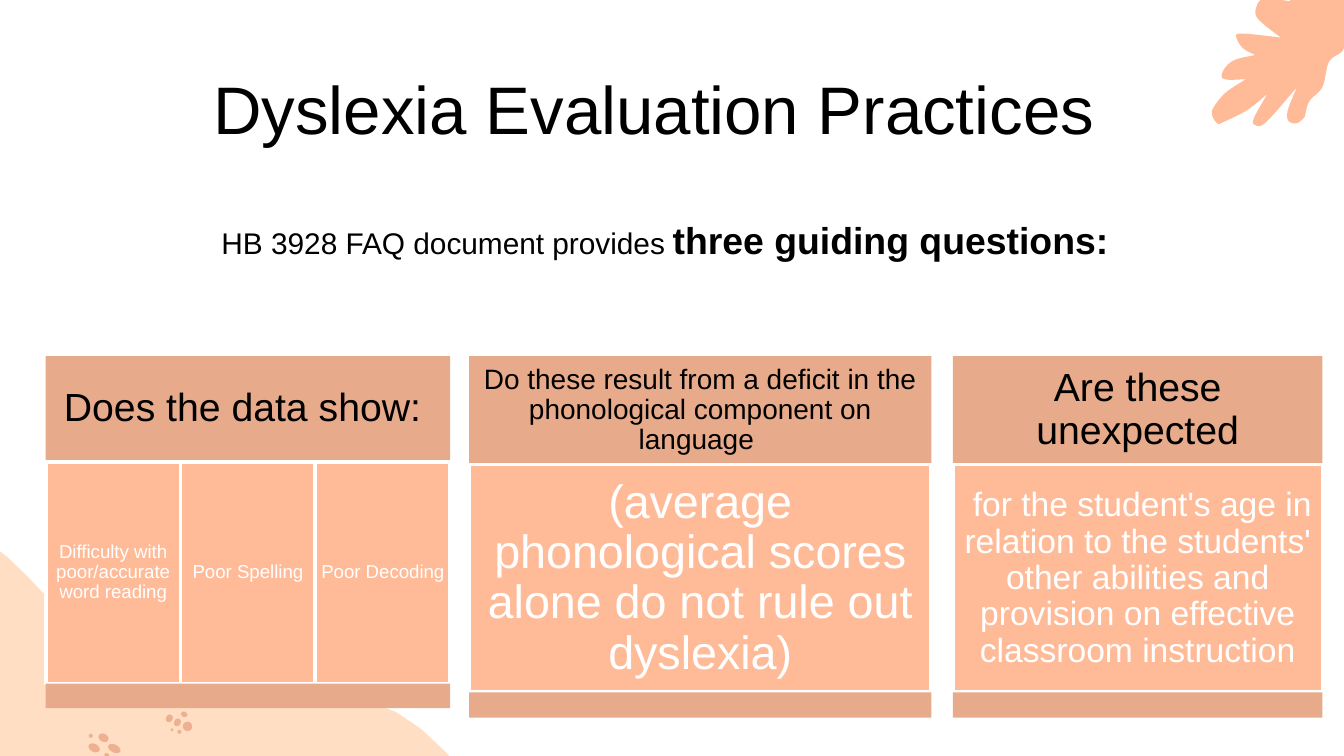
import pptx
import pptx.util
import pptx.dml.color
import pptx.enum.shapes
import pptx.enum.text

Inches, Pt = pptx.util.Inches, pptx.util.Pt
Shape = pptx.enum.shapes.MSO_SHAPE
Align = pptx.enum.text.PP_ALIGN
Anchor = pptx.enum.text.MSO_ANCHOR

THEME = {
    "font": "Arial",
    "ink": "000000", "white": "FFFFFF", "head": "E7AA8A", "body": "FFBB98",
    "blob": "FFDEC4", "speck": "EDB091",
    "title": 36, "lead": 16, "gap": 14, "strong": 20,
}

# Content
TITLE = "Dyslexia Evaluation Practices"
LEAD = [("HB 3928 FAQ document provides", "lead", False),
        (" ", "gap", False),
        ("three guiding questions:", "strong", True)]
# left, width, height; head text, size, inset; cell texts, size, inset
CARDS = [
    (0.34, 3.01, 2.62, ("Does the data show: ", 21, 0.09),
     (["Difficulty with poor/accurate word reading", "Poor Spelling",
       "Poor Decoding"], 10, 0.04)),
    (3.49, 3.44, 2.69,
     ("Do these result from a deficit in the phonological component on language ",
      15, 0.06),
     (["(average phonological scores alone do not rule out dyslexia)"], 25, 0.1)),
    (7.09, 2.75, 2.69, ("Are these unexpected", 21, 0.09),
     ([" for the student's age in relation to the students' other abilities "
       "and provision on effective classroom instruction"], 18, 0.07)),
]
TOP = 2.65
HEAD, BODY, FOOT = 0.3, 0.63, 0.07

# Outlines: each strand is a smooth curve, strands meet in sharp corners
LEAF = [
    [(9.6, 0.01), (9.41, -0.01), (9.35, 0.05), (9.36, 0.14), (9.53, 0.28)],
    [(9.53, 0.28), (9.24, 0.25), (9.2, 0.28), (9.25, 0.36), (9.34, 0.41)],
    [(9.34, 0.41), (9.18, 0.45), (9.1, 0.53), (9.11, 0.59), (9.27, 0.59)],
    [(9.27, 0.59), (9.12, 0.69), (9.03, 0.8), (9.02, 0.86), (9.06, 0.92),
     (9.1, 0.91), (9.28, 0.82), (9.43, 0.7)],
    [(9.43, 0.7), (9.33, 0.88), (9.34, 0.93), (9.42, 0.91), (9.65, 0.65)],
    [(9.65, 0.65), (9.58, 0.83), (9.6, 0.91), (9.7, 0.88), (9.91, 0.57)],
    [(9.91, 0.57), (9.87, 0.71), (9.96, 0.82), (10.08, 0.75), (10.2, 0.36)],
    [(10.2, 0.36), (10.22, 0.52), (10.3, 0.52), (10.41, 0.16), (10.43, -0.1)],
    [(10.43, -0.1), (10.2, -0.18), (10, -0.21), (9.95, -0.15), (10, -0.07)],
    [(10, -0.07), (9.87, -0.15), (9.66, -0.17), (9.6, -0.11), (9.6, 0.01)],
]
EDGE = [[
    (10.62, -0.08), (10.51, -0.15), (10.32, -0.16), (10.18, -0.03),
    (10.14, 0.11), (10.09, 0.15), (10.01, 0.28), (9.99, 0.38), (9.89, 0.46),
    (9.84, 0.65), (9.74, 0.76), (9.7, 0.91), (9.66, 0.98), (9.65, 1.06),
    (9.56, 1.29), (9.53, 1.38), (9.72, 1.28), (9.85, 1.12), (9.99, 1.04),
    (10.09, 0.93), (10.1, 0.77), (10.26, 0.62), (10.3, 0.44), (10.44, 0.34),
    (10.48, 0.26), (10.55, 0.24), (10.64, 0.07), (10.62, -0.08)]]
BLOB = [[
    (-4.1, 2.92), (-4.09, 2.77), (-3.96, 2.77), (-3.51, 3.02), (-2.88, 3.2),
    (-1.35, 3.35), (-0.09, 4.03), (1.14, 5.1), (2.95, 5.3), (4.25, 6.77),
    (5.37, 7.55), (5.88, 8.84), (5.85, 8.96), (5.62, 9.02), (4.57, 8.66),
    (2.98, 8.96), (1.53, 8.57), (0.06, 8.37), (-1.06, 8.74), (-1.44, 8.58),
    (-2.41, 8.33), (-2.73, 8.26), (-2.94, 7.86), (-3.6, 5.07), (-4.1, 2.92)]]
SPECKS = [
    (0.67, 5.52, 0.06, 0.09), (0.74, 5.45, 0.06, 0.08), (0.82, 5.52, 0.06, 0.1),
    (0.78, 5.6, 0.03, 0.04), (0.66, 5.46, 0.03, 0.03), (1.35, 5.29, 0.04, 0.05),
    (1.36, 5.37, 0.07, 0.07), (1.29, 5.35, 0.06, 0.05), (1.32, 5.43, 0.03, 0.03),
    (1.23, 5.32, 0.06, 0.05), (1.27, 5.42, 0.02, 0.02)]
TURN = 117.3


def color(name):
    return pptx.dml.color.RGBColor.from_string(THEME[name])


def paint(shape, fill, line=None):
    shape.shadow.inherit = False
    shape.fill.solid()
    shape.fill.fore_color.rgb = color(fill)
    if line:
        shape.line.color.rgb = color(line)
        shape.line.width = Pt(2)
    else:
        shape.line.fill.background()


def style(font, size, ink, bold=False):
    font.name, font.size, font.bold = THEME["font"], Pt(size), bold
    font.color.rgb = color(ink)


def curve(dots, steps=8):
    """Points of a smooth line through the dots."""
    ring = dots[0] == dots[-1]
    first, last = (dots[-2], dots[1]) if ring else (dots[0], dots[-1])
    pad = [first, *dots, last]
    for a, b, c, d in zip(pad, pad[1:], pad[2:], pad[3:]):
        for t in (i / steps for i in range(1, steps + 1)):
            yield tuple(
                Inches((2 * q + (r - p) * t
                        + (2 * p - 5 * q + 4 * r - s) * t ** 2
                        + (3 * q - p - 3 * r + s) * t ** 3) / 2)
                for p, q, r, s in zip(a, b, c, d))


def outline(shapes, strands, fill):
    pen = shapes.build_freeform(*map(Inches, strands[0][0]))
    pen.add_line_segments([dot for strand in strands for dot in curve(strand)])
    paint(pen.convert_to_shape(), fill)


def box(shapes, rect, fill, line=None, kind=Shape.RECTANGLE):
    shape = shapes.add_shape(kind, *map(Inches, rect))
    paint(shape, fill, line)
    return shape


def label(shape, text, size, inset, ink):
    frame = shape.text_frame
    frame.word_wrap = True
    frame.vertical_anchor = Anchor.MIDDLE
    frame.margin_left = frame.margin_right = Inches(inset)
    frame.margin_top = frame.margin_bottom = Inches(inset)
    para = frame.paragraphs[0]
    para.text, para.alignment, para.line_spacing = text, Align.CENTER, 0.9
    style(para.font, size, ink)


def card(shapes, left, width, height, head, cells):
    high, mid, low = (height * part for part in (HEAD, BODY, FOOT))
    label(box(shapes, (left, TOP, width, high), "head"), *head, "ink")
    texts, size, inset = cells
    wide = width / len(texts)
    for i, text in enumerate(texts):
        cell = box(shapes, (left + i * wide, TOP + high, wide, mid),
                   "body", "white")
        label(cell, text, size, inset, "white")
    box(shapes, (left, TOP + high + mid, width, low), "head")


def main():
    deck = pptx.Presentation()
    deck.slide_width = Inches(10)
    deck.slide_height = deck.slide_width * 9 // 16
    slide = deck.slides.add_slide(deck.slide_layouts[5])
    shapes = slide.shapes

    # Leaf, blob and specks
    for strands, fill in ((LEAF, "body"), (EDGE, "white"), (BLOB, "blob")):
        outline(shapes, strands, fill)
    for rect in SPECKS:
        box(shapes, rect, "speck", kind=Shape.OVAL).rotation = TURN

    # Title
    title = shapes.title
    title.left, title.top = Inches(0.76), Inches(0.45)
    title.width, title.height = Inches(8.21), Inches(0.71)
    frame = title.text_frame
    frame.auto_size = pptx.enum.text.MSO_AUTO_SIZE.NONE
    frame.vertical_anchor = Anchor.TOP
    para = frame.paragraphs[0]
    para.text, para.alignment = TITLE, Align.CENTER
    style(para.font, THEME["title"], "ink")

    # Question cards
    for item in CARDS:
        card(shapes, *item)

    # Lead line
    lead = shapes.add_textbox(*map(Inches, (1.55, 1.57, 6.9, 0.44)))
    lead.text_frame.word_wrap = True
    para = lead.text_frame.paragraphs[0]
    for text, size, bold in LEAD:
        run = para.add_run()
        run.text = text
        style(run.font, THEME[size], "ink", bold)

    deck.save("out.pptx")


if __name__ == "__main__":
    main()
